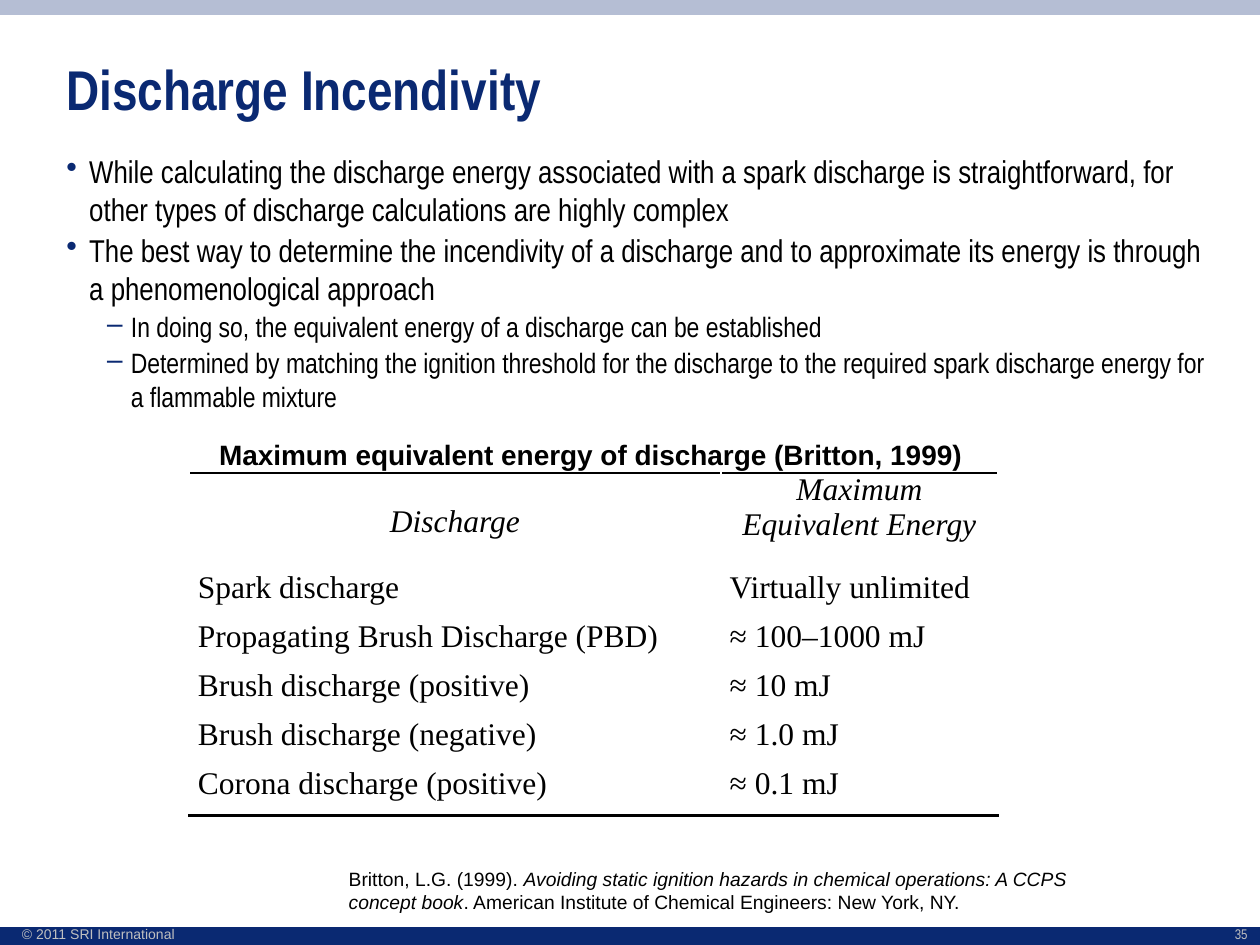
from lxml import etree
from pptx import Presentation
from pptx import util as u
from pptx.dml.color import RGBColor
from pptx.enum import shapes, text
from pptx.oxml import ns

NAVY = RGBColor(0x0A, 0x29, 0x72)
BLACK = RGBColor(0, 0, 0)
SILVER = RGBColor(0xC0, 0xC0, 0xC0)
NARROW, SANS, SERIF = "Arial Narrow", "Arial", "Times New Roman"
CENTER, RIGHT = text.PP_ALIGN.CENTER, text.PP_ALIGN.RIGHT
MIDDLE, TOP = text.MSO_ANCHOR.MIDDLE, text.MSO_ANCHOR.TOP

SLIDE_WIDTH, SLIDE_HEIGHT = 25.4, 19.05
TITLE = "Discharge Incendivity"
BULLETS = [
    (0, "While calculating the discharge energy associated with a spark discharge is "
        "straightforward, for other types of discharge calculations are highly complex"),
    (0, "The best way to determine the incendivity of a discharge and to approximate "
        "its energy is through a phenomenological approach"),
    (1, "In doing so, the equivalent energy of a discharge can be established"),
    (1, "Determined by matching the ignition threshold for the discharge to the required "
        "spark discharge energy for a flammable mixture"),
]
# bullet sign, text size, left margin and hanging indent in cm
LEVELS = [("•", 18, 0.46, 0.46), ("–", 16, 1.3, 0.48)]
CAPTION = "Maximum equivalent energy of discharge (Britton, 1999)"
ROWS = [
    ("Discharge", "Maximum\nEquivalent Energy"),
    ("Spark discharge", "Virtually unlimited"),
    ("Propagating Brush Discharge (PBD)", "≈ 100–1000 mJ"),
    ("Brush discharge (positive)", "≈ 10 mJ"),
    ("Brush discharge (negative)", "≈ 1.0 mJ"),
    ("Corona discharge (positive)", "≈ 0.1 mJ"),
]
COLUMN_WIDTHS = (10.72, 5.59)
HEADER_HEIGHT, ROW_HEIGHT = 1.96, 0.99
REFERENCE = [
    ("Britton, L.G. (1999). ", False),
    ("Avoiding static ignition hazards in chemical operations: A CCPS concept book", True),
    (". American Institute of Chemical Engineers: New York, NY.", False),
]


def add_span(para, words, size=18, font=SANS, color=BLACK, bold=False, italic=False):
    for index, line in enumerate(words.split("\n")):
        if index:
            para.add_line_break()
        span = para.add_run()
        span.text = line
        span.font.size = u.Pt(size)
        span.font.name = font
        span.font.color.rgb = color
        span.font.bold = bold
        span.font.italic = italic


def add_box(page, left, top, width, height, anchor=TOP):
    """Add an empty wrapping text box and return its text frame."""
    box = page.shapes.add_textbox(u.Cm(left), u.Cm(top), u.Cm(width), u.Cm(height))
    frame = box.text_frame
    frame.word_wrap = True
    frame.vertical_anchor = anchor
    return frame


def add_label(page, place, words, align=None, anchor=TOP, **style):
    para = add_box(page, *place, anchor=anchor).paragraphs[0]
    para.alignment = align
    add_span(para, words, **style)
    return para


def add_bar(page, top, height, opacity=100):
    bar = page.shapes.add_shape(shapes.MSO_SHAPE.RECTANGLE, 0, u.Cm(top),
                                u.Cm(SLIDE_WIDTH), u.Cm(height))
    bar.shadow.inherit = False
    bar.line.fill.background()
    bar.fill.solid()
    bar.fill.fore_color.rgb = NAVY
    if opacity < 100:
        color = bar.fill._xPr.find(".//" + ns.qn("a:srgbClr"))
        etree.SubElement(color, ns.qn("a:alpha"), val=str(opacity * 1000))


def add_bullets(page):
    frame = add_box(page, 1.09, 2.95, 23.67, 13.26)
    for index, (level, words) in enumerate(BULLETS):
        para = frame.add_paragraph() if index else frame.paragraphs[0]
        sign, size, margin, hang = LEVELS[level]
        para.level = level
        if index:
            para.space_before = u.Pt(size / 10)
        props = para._p.get_or_add_pPr()
        props.set("marL", str(u.Cm(margin)))
        props.set("indent", str(-u.Cm(hang)))
        color = etree.SubElement(props, ns.qn("a:buClr"))
        etree.SubElement(color, ns.qn("a:srgbClr"), val=str(NAVY))
        etree.SubElement(props, ns.qn("a:buChar"), char=sign)
        add_span(para, words, size=size, font=NARROW)


def add_border(cell, side):
    """Draw a black rule on one side of a cell: lnT or lnB."""
    line = etree.Element(ns.qn("a:" + side), w=str(u.Pt(1.5)))
    fill = etree.SubElement(line, ns.qn("a:solidFill"))
    etree.SubElement(fill, ns.qn("a:srgbClr"), val=str(BLACK))
    cell._tc.get_or_add_tcPr().insert(0, line)


def add_energy_table(page):
    heights = [HEADER_HEIGHT] + [ROW_HEIGHT] * (len(ROWS) - 1)
    table = page.shapes.add_table(len(ROWS), len(COLUMN_WIDTHS), u.Cm(3.81), u.Cm(9.53),
                                  u.Cm(sum(COLUMN_WIDTHS)), u.Cm(sum(heights))).table
    table.first_row = table.horz_banding = False
    for column, width in zip(table.columns, COLUMN_WIDTHS):
        column.width = u.Cm(width)
    for r, (words, height) in enumerate(zip(ROWS, heights)):
        table.rows[r].height = u.Cm(height)
        header = r == 0
        for c, entry in enumerate(words):
            cell = table.cell(r, c)
            cell.fill.background()
            cell.margin_left = cell.margin_right = u.Cm(0.18)
            cell.margin_top = cell.margin_bottom = 0
            cell.vertical_anchor = MIDDLE if header and c == 0 else TOP
            para = cell.text_frame.paragraphs[0]
            para.alignment = CENTER if header else None
            add_span(para, entry, font=SERIF, italic=header)
            if header:
                add_border(cell, "lnT")
            elif r == len(ROWS) - 1:
                add_border(cell, "lnB")


def main():
    deck = Presentation()
    deck.slide_width, deck.slide_height = u.Cm(SLIDE_WIDTH), u.Cm(SLIDE_HEIGHT)
    page = deck.slides.add_slide(deck.slide_layouts[6])

    add_bar(page, 0, 0.3, opacity=30)
    add_bar(page, 18.69, 0.36)
    add_label(page, (0, 18.54, 3.78, 0.41), "© 2011 SRI International",
              align=RIGHT, size=8, color=SILVER)
    title = add_label(page, (1.09, 0.76, 23.67, 2.26), TITLE, anchor=MIDDLE,
                      size=32, font=NARROW, color=NAVY, bold=True)
    title.line_spacing = 0.85
    add_bullets(page)
    add_label(page, (19.48, 18.54, 5.92, 0.33), "35",
              align=RIGHT, size=8, font=NARROW, color=SILVER)
    add_energy_table(page)
    add_label(page, (3.81, 8.69, 16.2, 1.63), CAPTION, align=CENTER, size=16, bold=True)
    reference = add_box(page, 6.78, 17.35, 16.08, 1.19).paragraphs[0]
    for words, italic in REFERENCE:
        add_span(reference, words, size=11, italic=italic)

    deck.save("out.pptx")


if __name__ == "__main__":
    main()
